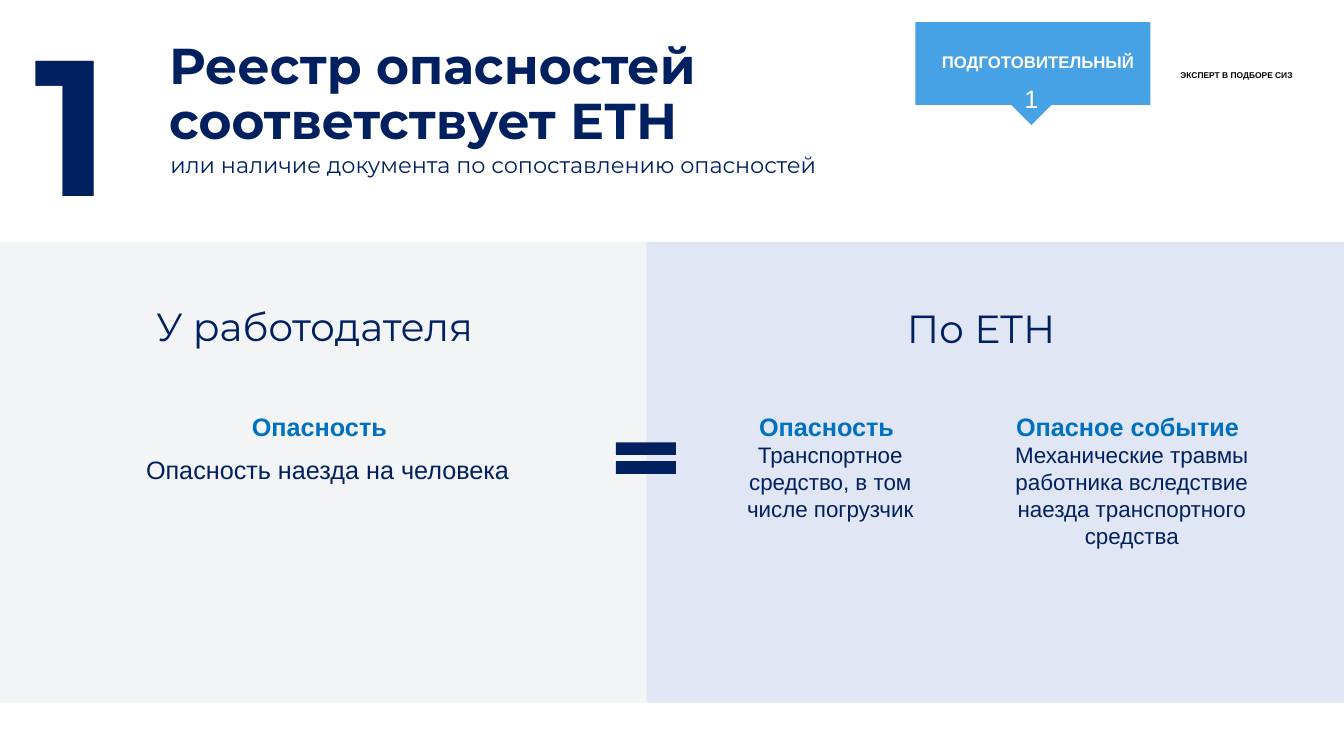
from dataclasses import dataclass

from pptx import Presentation
from pptx.dml.color import RGBColor
from pptx.enum.shapes import MSO_SHAPE
from pptx.enum.text import PP_ALIGN
from pptx.util import Inches, Pt

RECT = MSO_SHAPE.RECTANGLE
EQUAL = MSO_SHAPE.MATH_EQUAL
LEFT, MID = PP_ALIGN.LEFT, PP_ALIGN.CENTER


@dataclass(frozen=True)
class Theme:
    navy: str = "002060"
    blue: str = "0070C0"
    sky: str = "47A1E5"
    gray: str = "F3F4F6"
    pale: str = "E0E6F3"
    white: str = "FFFFFF"
    black: str = "000000"
    sans: str = "Arial"
    brand: str = "Montserrat"
    huge: int = 138
    title: int = 36
    side: int = 28
    head: int = 18
    body: int = 16
    tag: int = 12
    tiny: int = 6


theme = Theme()
deck = Presentation()
deck.slide_width, deck.slide_height = Inches(13.33), Inches(7.5)
slide = deck.slides.add_slide(deck.slide_layouts[6])


def paint(shape, color):
    shape.shadow.inherit = False
    shape.fill.solid()
    shape.fill.fore_color.rgb = RGBColor.from_string(color)
    shape.line.fill.background()


def write(words, area, size, color, font=theme.sans, bold=False, align=LEFT):
    box = slide.shapes.add_textbox(*map(Inches, area))
    frame = box.text_frame
    frame.word_wrap = True
    para = frame.paragraphs[0]
    para.alignment = align
    run = para.add_run()
    run.text = words
    run.font.size = Pt(size)
    run.font.name = font
    run.font.bold = bold
    run.font.color.rgb = RGBColor.from_string(color)
    return box


split, top, depth = 6.41, 2.4, 4.57
blocks = [
    (RECT, (0, top, split, depth), theme.gray),
    (RECT, (split, top, 13.33 - split, depth), theme.pale),
    (EQUAL, (6, 4.28, 0.81, 0.53), theme.navy),
    (RECT, (9.08, 0.22, 2.33, 0.82), theme.sky),
]
for kind, area, color in blocks:
    block = slide.shapes.add_shape(kind, *map(Inches, area))
    paint(block, color)
    if kind == EQUAL:
        block.adjustments[0] = 0.235
        block.adjustments[1] = 0.118

tip = slide.shapes.build_freeform(Inches(10.62), Inches(0.85))
tip.add_line_segments(
    [(Inches(10.23), Inches(1.24)), (Inches(9.88), Inches(0.89))], close=True
)
paint(tip.convert_to_shape(), theme.sky)

write("ЭКСПЕРТ В ПОДБОРЕ СИЗ", (11.61, 0.65, 1.45, 0.2), theme.tiny, theme.black, bold=True)
tag = write("ПОДГОТОВИТЕЛЬНЫЙ", (9.12, 0.51, 2.35, 0.2), theme.tag, theme.white, bold=True, align=MID)
frame = tag.text_frame
frame.margin_left = frame.margin_right = frame.margin_top = frame.margin_bottom = 0
write("1", (10.06, 0.78, 0.34, 0.4), theme.head, theme.white, align=MID)

write("1", (0.24, -0.02, 2.11, 2.42), theme.huge, theme.navy, theme.brand, True)
title = write(
    "Реестр опасностей соответствует ЕТН",
    (1.58, 0.35, 8.45, 0.73), theme.title, theme.navy, theme.brand, True,
)
title.text_frame.paragraphs[0].line_spacing = Pt(39)
write(
    "или наличие документа по сопоставлению опасностей",
    (1.59, 1.45, 8.29, 0.37), theme.body, theme.navy, theme.brand,
)

sides = [("У работодателя", (0.37, 2.95, 5.5, 0.57)), ("По ЕТН", (8.7, 2.97, 2.06, 0.61))]
for words, area in sides:
    write(words, area, theme.side, theme.navy, theme.brand, align=MID)

heads = [("Опасность", 2.4, 1.72), ("Опасность", 7.43, 1.64), ("Опасное событие", 9.98, 2.57)]
for words, left, width in heads:
    write(words, (left, 4.03, width, 0.43), theme.head, theme.blue, bold=True)

notes = [
    ("Опасность наезда на человека", (1.05, 4.46, 4.4, 0.73), theme.head),
    ("Транспортное средство, в том числе погрузчик", (7.05, 4.33, 2.37, 0.8), theme.body),
    (
        "Механические травмы работника вследствие наезда транспортного средства",
        (9.77, 4.33, 2.91, 0.43), theme.body,
    ),
]
for words, area, size in notes:
    write(words, area, size, theme.navy, align=MID)

deck.save("out.pptx")
